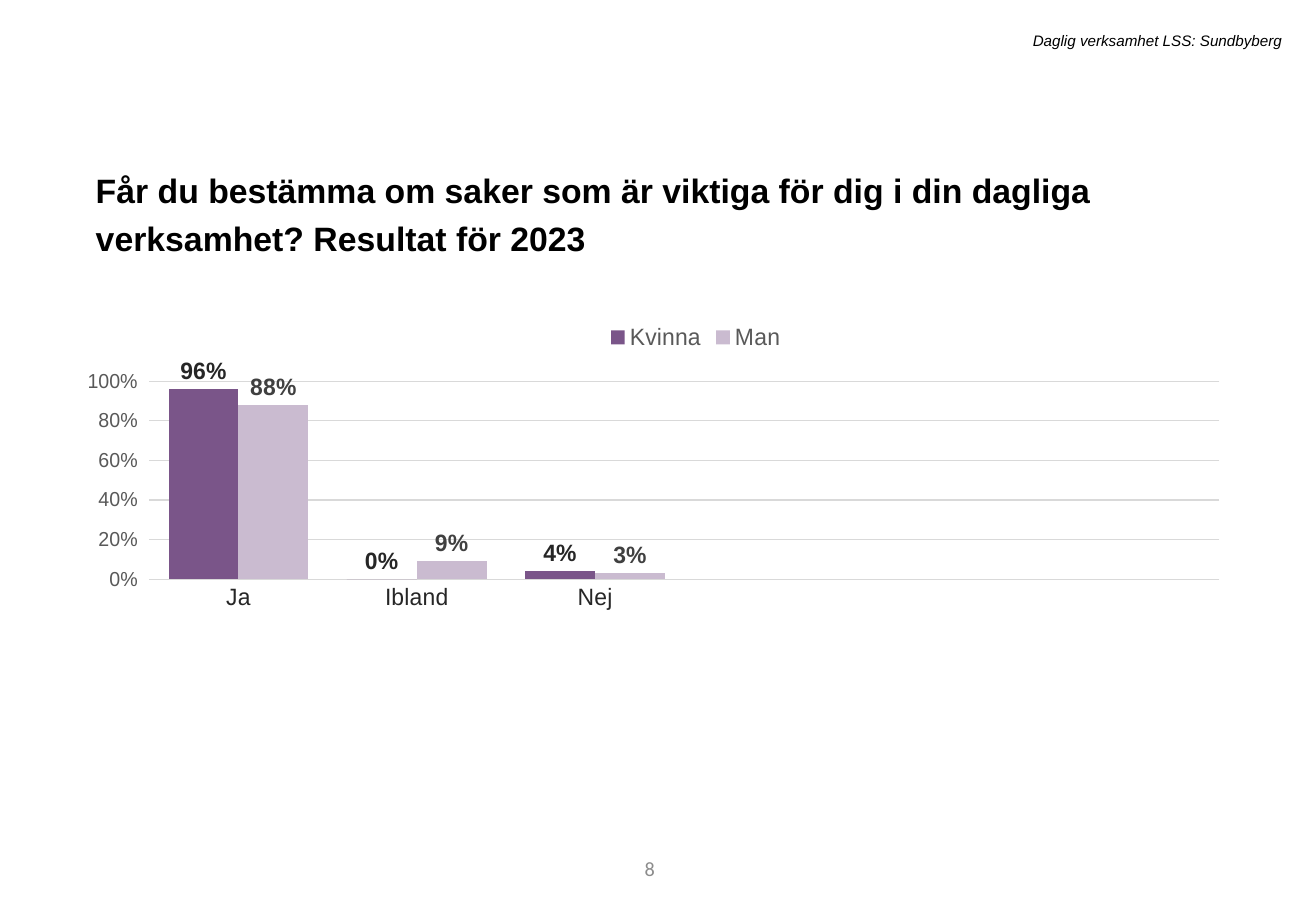
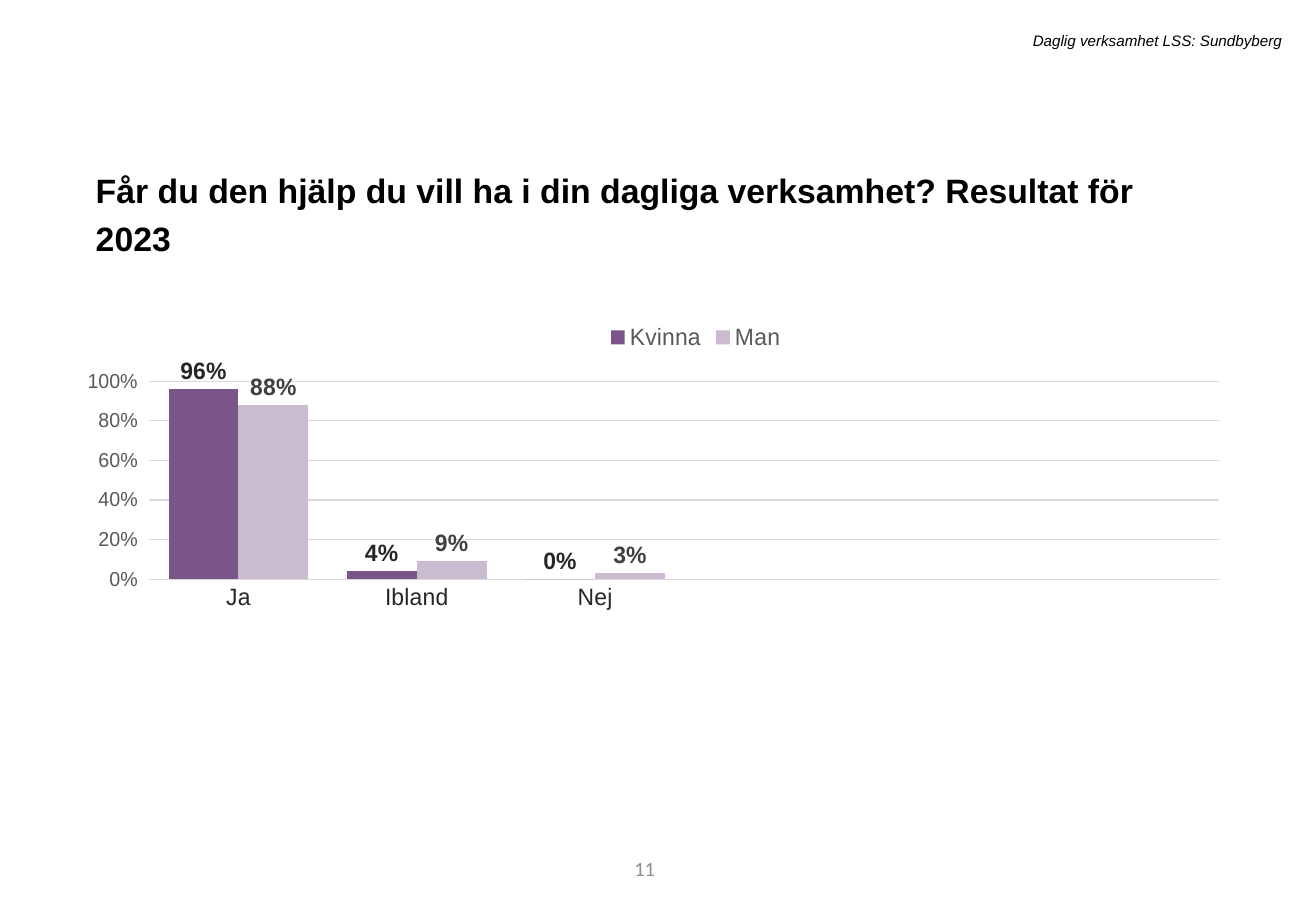
"""Build two survey result slides that share a header, title, chart and page number."""
from dataclasses import dataclass

from lxml import etree
from pptx import Presentation
from pptx.chart.chart import Chart
from pptx.chart.data import CategoryChartData
from pptx.dml.color import RGBColor
from pptx.enum.chart import XL_CHART_TYPE, XL_LABEL_POSITION, XL_LEGEND_POSITION, XL_TICK_MARK
from pptx.enum.text import MSO_ANCHOR, MSO_AUTO_SIZE, PP_ALIGN
from pptx.oxml.ns import qn
from pptx.slide import Slide
from pptx.util import Pt

CLUSTERED = XL_CHART_TYPE.COLUMN_CLUSTERED
OUTSIDE_END = XL_LABEL_POSITION.OUTSIDE_END
LEGEND_TOP = XL_LEGEND_POSITION.TOP
TICK_NONE, TICK_OUT = XL_TICK_MARK.NONE, XL_TICK_MARK.OUTSIDE
LEFT, RIGHT = PP_ALIGN.LEFT, PP_ALIGN.RIGHT
TOP, MIDDLE = MSO_ANCHOR.TOP, MSO_ANCHOR.MIDDLE
GROW, FIXED = MSO_AUTO_SIZE.SHAPE_TO_FIT_TEXT, MSO_AUTO_SIZE.NONE

FONT, NUMBER_FONT = "Arial", "Calibri"
BLACK, DARK, LABEL_GREY, TEXT_GREY = "000000", "262626", "404040", "595959"
NUMBER_GREY, GRID_GREY = "8C8C8C", "D9D9D9"
PERCENT = "0%"
HEADER = "Daglig verksamhet LSS: Sundbyberg"
ANSWERS = ("Ja", "Ibland", "Nej", "", "", "")


@dataclass(frozen=True)
class Group:
    name: str
    fill: str
    label: str


@dataclass(frozen=True)
class Question:
    title: str
    page: int
    shares: tuple[tuple[float, ...], ...]


GROUPS = (Group("Kvinna", "7A5589", DARK), Group("Man", "CABBD0", LABEL_GREY))
QUESTIONS = (
    Question("Får du bestämma om saker som är viktiga för dig i din dagliga verksamhet? "
             "Resultat för 2023", 8, ((0.96, 0, 0.04), (0.88, 0.09, 0.03))),
    Question("Får du den hjälp du vill ha i din dagliga verksamhet? Resultat för 2023",
             11, ((0.96, 0.04, 0), (0.88, 0.09, 0.03))),
)


def colour(value: str) -> RGBColor:
    return RGBColor.from_string(value)


def style_font(font, size: float, tint: str, bold: bool = False,
               italic: bool = False, name: str = FONT) -> None:
    font.name, font.size = name, Pt(size)
    font.bold, font.italic = bold, italic
    font.color.rgb = colour(tint)


def add_text(slide: Slide, text: str, *, at: tuple[float, ...], size: float,
             tint: str = BLACK, bold: bool = False, italic: bool = False,
             name: str = FONT, align=LEFT, anchor=TOP, fit=GROW,
             line_spacing: float = 1, space_before: float = 0) -> None:
    frame = slide.shapes.add_textbox(*map(Pt, at)).text_frame
    frame.word_wrap, frame.auto_size, frame.vertical_anchor = True, fit, anchor
    paragraph = frame.paragraphs[0]
    paragraph.alignment = align
    paragraph.line_spacing, paragraph.space_before = line_spacing, Pt(space_before)
    run = paragraph.add_run()
    run.text = text
    style_font(run.font, size, tint, bold, italic, name)


def set_layout(parent, index: int, **settings: str | float) -> None:
    for old in parent.findall(qn("c:layout")):
        parent.remove(old)
    layout = etree.Element(qn("c:layout"))
    manual = etree.SubElement(layout, qn("c:manualLayout"))
    for key, value in settings.items():
        etree.SubElement(manual, qn(f"c:{key}"), val=str(value))
    parent.insert(index, layout)


def style_axes(chart: Chart) -> None:
    answers, shares = chart.category_axis, chart.value_axis
    answers.major_tick_mark = answers.minor_tick_mark = TICK_NONE
    answers.format.line.color.rgb = colour(GRID_GREY)
    answers.format.line.width = Pt(0.75)
    style_font(answers.tick_labels.font, 14, DARK)

    shares.minimum_scale, shares.maximum_scale, shares.major_unit = 0, 1, 0.2
    shares.major_tick_mark, shares.minor_tick_mark = TICK_OUT, TICK_NONE
    shares.format.line.fill.background()
    shares.has_major_gridlines = True
    shares.major_gridlines.format.line.color.rgb = colour(GRID_GREY)
    shares.major_gridlines.format.line.width = Pt(0.75)
    shares.tick_labels.number_format = PERCENT
    shares.tick_labels.number_format_is_linked = False
    style_font(shares.tick_labels.font, 12, TEXT_GREY)


def style_columns(chart: Chart) -> None:
    columns = chart.plots[0]
    columns.gap_width, columns.overlap, columns.vary_by_categories = 55, 0, False
    for group, series in zip(GROUPS, columns.series):
        series.format.fill.solid()
        series.format.fill.fore_color.rgb = colour(group.fill)
        series.invert_if_negative = False
        labels = series.data_labels
        labels.show_value, labels.position = True, OUTSIDE_END
        labels.number_format, labels.number_format_is_linked = PERCENT, False
        style_font(labels.font, 14, group.label, bold=True)


def add_result_chart(slide: Slide, question: Question) -> None:
    data = CategoryChartData(number_format=PERCENT)
    data.categories = ANSWERS
    for group, shares in zip(GROUPS, question.shares):
        unused = (None,) * (len(ANSWERS) - len(shares))
        data.add_series(group.name, shares + unused)
    bounds = map(Pt, (51.84, 182.16, 676.8, 284.4))
    chart = slide.shapes.add_chart(CLUSTERED, *bounds, data).chart
    chart.has_title = False
    style_font(chart.font, 10, BLACK)
    style_axes(chart)
    style_columns(chart)
    chart.has_legend = True
    chart.legend.position, chart.legend.include_in_layout = LEGEND_TOP, False
    style_font(chart.legend.font, 14, TEXT_GREY)
    plot_area = chart.element.find(f".//{qn('c:plotArea')}")
    legend = chart.element.find(f".//{qn('c:legend')}")
    set_layout(plot_area, 0, layoutTarget="inner", xMode="edge", yMode="edge",
               x=0.025, y=0.154, w=0.966, h=0.413)
    set_layout(legend, 1, xMode="edge", yMode="edge", x=0.435, y=0.025)


def add_question(slide: Slide, question: Question) -> None:
    add_text(slide, str(question.page), at=(219.6, 500.4, 175.68, 28.8), size=12,
             tint=NUMBER_GREY, name=NUMBER_FONT, align=RIGHT, anchor=MIDDLE, fit=FIXED)
    add_result_chart(slide, question)
    add_text(slide, question.title, at=(49.68, 92.16, 676.8, 33.84), size=20, bold=True,
             line_spacing=1.2, space_before=10)
    add_text(slide, HEADER, at=(128.88, 15.12, 637.92, 18), size=9, italic=True, align=RIGHT)


def main() -> None:
    deck = Presentation()
    deck.slide_width, deck.slide_height = Pt(780), Pt(540)
    blank = deck.slide_layouts[6]
    for question in QUESTIONS:
        add_question(deck.slides.add_slide(blank), question)
    deck.save("out.pptx")


if __name__ == "__main__":
    main()
